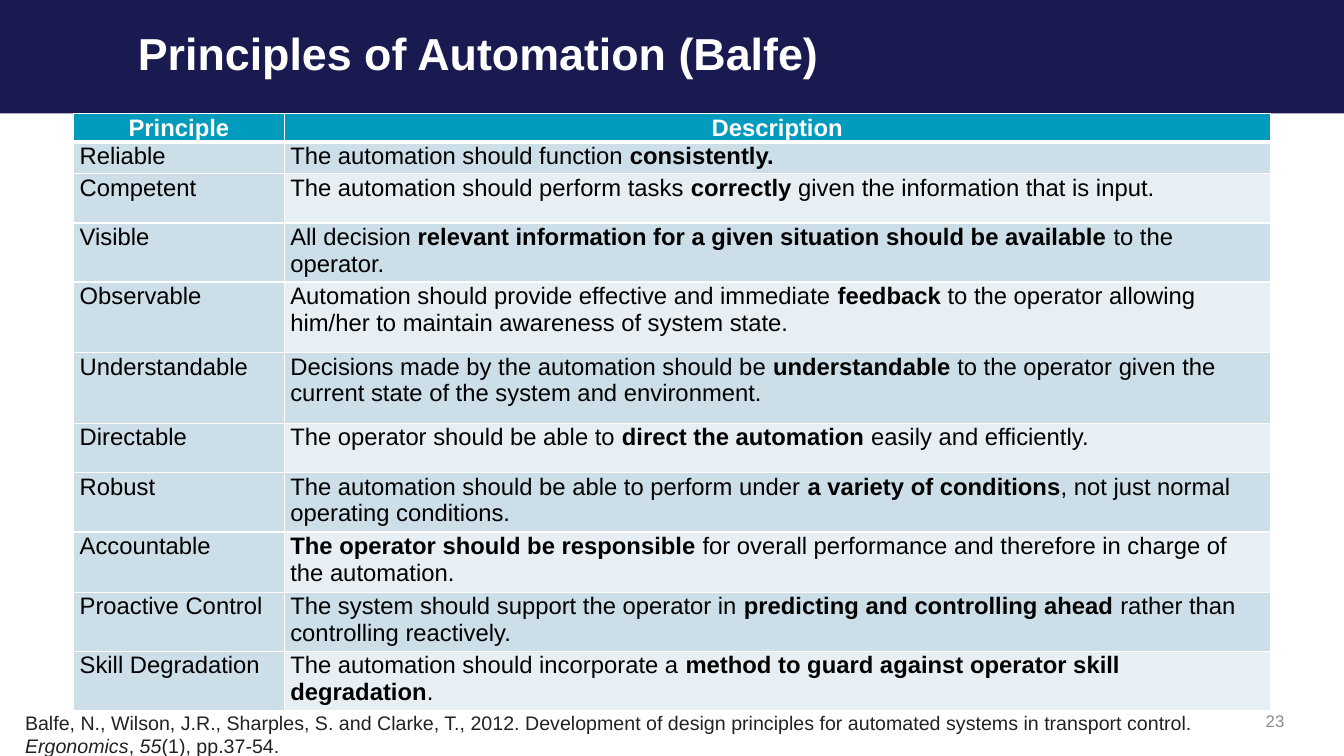
from dataclasses import dataclass
from lxml.etree import SubElement
from pptx import Presentation
from pptx.dml.color import RGBColor
from pptx.enum.shapes import MSO_SHAPE
from pptx.enum.text import MSO_ANCHOR, MSO_AUTO_SIZE, PP_ALIGN
from pptx.oxml.ns import qn
from pptx.util import Pt


@dataclass(frozen=True)
class Theme:
    font: str = "Arial"
    navy: str = "191A4F"
    teal: str = "009BBD"
    blue: str = "CCDEE8"
    pale: str = "E7EFF4"
    white: str = "FFFFFF"
    black: str = "000000"
    ink: str = "222222"
    gray: str = "8C8C8C"
    title: int = 32
    body: int = 17
    note: int = 14
    page: int = 12


THEME = Theme()
COLS = (150.5, 704.2)
HEAD = (20.2, ("Principle", "Description"))
ROWS = (
    (22.5, "Reliable", "The automation should function **consistently."),
    (35.3, "Competent", "The automation should perform tasks **correctly** given the information that is input."),
    (40.3, "Visible", "All decision **relevant information for a given situation should be available **to the operator."),
    (50.4, "Observable", "Automation should provide effective and immediate **feedback** to the operator allowing him/her to maintain awareness of system state."),
    (50.4, "Understandable", "Decisions made by the automation should be **understandable **to the operator given the current state of the system and environment."),
    (35.3, "Directable", "The operator should be able to **direct the automation **easily and efficiently."),
    (42.5, "Robust", "The automation should be able to perform under **a variety of conditions**, not just normal operating conditions."),
    (43, "Accountable", "**The operator should be responsible **for overall performance and therefore in charge of the automation."),
    (40.3, "Proactive Control", "The system should support the operator in **predicting and controlling ahead **rather than controlling reactively."),
    (40.3, "Skill Degradation", "The automation should incorporate a **method to guard against operator skill degradation**."),
)
SOURCE = "Balfe, N., Wilson, J.R., Sharples, S. and Clarke, T., 2012. Development of design principles for automated systems in transport control. **Ergonomics**, **55**(1), pp.37-54."


def rgb(code):
    return RGBColor.from_string(code)


def write(frame, text, size, color, align=PP_ALIGN.LEFT, bold=False, mark="bold"):
    para = frame.paragraphs[0]
    para.alignment = align
    for place, part in enumerate(text.split("**")):
        if part:
            run = para.add_run()
            run.text = part
            if place % 2:
                setattr(run.font, mark, True)
    font = para.font
    font.name = THEME.font
    font.size = Pt(size)
    font.bold = bold
    font.color.rgb = rgb(color)
    return para


def add_text(slide, area, text, size, color, anchor=MSO_ANCHOR.MIDDLE, **style):
    box = slide.shapes.add_textbox(*map(Pt, area))
    frame = box.text_frame
    frame.word_wrap = True
    frame.vertical_anchor = anchor
    return frame, write(frame, text, size, color, **style)


def add_bar(slide, area, color):
    bar = slide.shapes.add_shape(MSO_SHAPE.RECTANGLE, *map(Pt, area))
    bar.shadow.inherit = False
    bar.fill.solid()
    bar.fill.fore_color.rgb = rgb(color)
    bar.line.fill.background()


def add_edges(cell, top, bottom):
    props = cell._tc.get_or_add_tcPr()
    sides = (("L", 1), ("R", 1), ("T", top), ("B", bottom))
    for place, (side, width) in enumerate(sides):
        edge = SubElement(props, qn(f"a:ln{side}"), w=str(Pt(width)))
        fill = SubElement(edge, qn("a:solidFill"))
        SubElement(fill, qn("a:srgbClr"), val=THEME.white)
        props.insert(place, edge)


def fill_cell(cell, text, fill, color, pad, top=1, bottom=1, **style):
    cell.margin_left = cell.margin_right = Pt(4.3)
    cell.margin_top = cell.margin_bottom = Pt(pad)
    cell.fill.solid()
    cell.fill.fore_color.rgb = rgb(fill)
    add_edges(cell, top, bottom)
    write(cell.text_frame, text, THEME.body, color, **style)


def add_grid(slide, left, top):
    heights = [HEAD[0], *(row[0] for row in ROWS)]
    area = (left, top, sum(COLS), sum(heights))
    grid = slide.shapes.add_table(len(heights), len(COLS), *map(Pt, area)).table
    grid.horz_banding = False
    for col, width in zip(grid.columns, COLS):
        col.width = Pt(width)
    for row, height in zip(grid.rows, heights):
        row.height = Pt(height)
    for place, label in enumerate(HEAD[1]):
        cell = grid.cell(0, place)
        cell.vertical_anchor = MSO_ANCHOR.MIDDLE
        fill_cell(cell, label, THEME.teal, THEME.white, 0, bottom=3,
                  align=PP_ALIGN.CENTER, bold=True)
    for line, (_, name, detail) in enumerate(ROWS, 1):
        shade = THEME.blue if line % 2 else THEME.pale
        edge = 3 if line == 1 else 1
        fill_cell(grid.cell(line, 0), name, THEME.blue, THEME.black, 0.7, top=edge)
        fill_cell(grid.cell(line, 1), detail, shade, THEME.black, 0.7, top=edge)


def main():
    deck = Presentation()
    deck.slide_width, deck.slide_height = Pt(960), Pt(540)
    slide = deck.slides.add_slide(deck.slide_layouts[6])
    add_bar(slide, (0, 0, 960, 81), THEME.navy)
    add_text(slide, (695.5, 500.4, 229, 28.8), "23", THEME.page, THEME.gray,
             align=PP_ALIGN.RIGHT)
    _, title = add_text(slide, (91.4, -0.7, 833, 81), "Principles of Automation (Balfe)",
                        THEME.title, THEME.white, bold=True)
    title.line_spacing = 0.9
    add_grid(slide, 52.6, 81)
    frame, _ = add_text(slide, (10.8, 504, 918.7, 41), SOURCE, THEME.note, THEME.ink,
                        anchor=MSO_ANCHOR.TOP, mark="italic")
    frame.auto_size = MSO_AUTO_SIZE.SHAPE_TO_FIT_TEXT
    deck.save("out.pptx")


if __name__ == "__main__":
    main()
